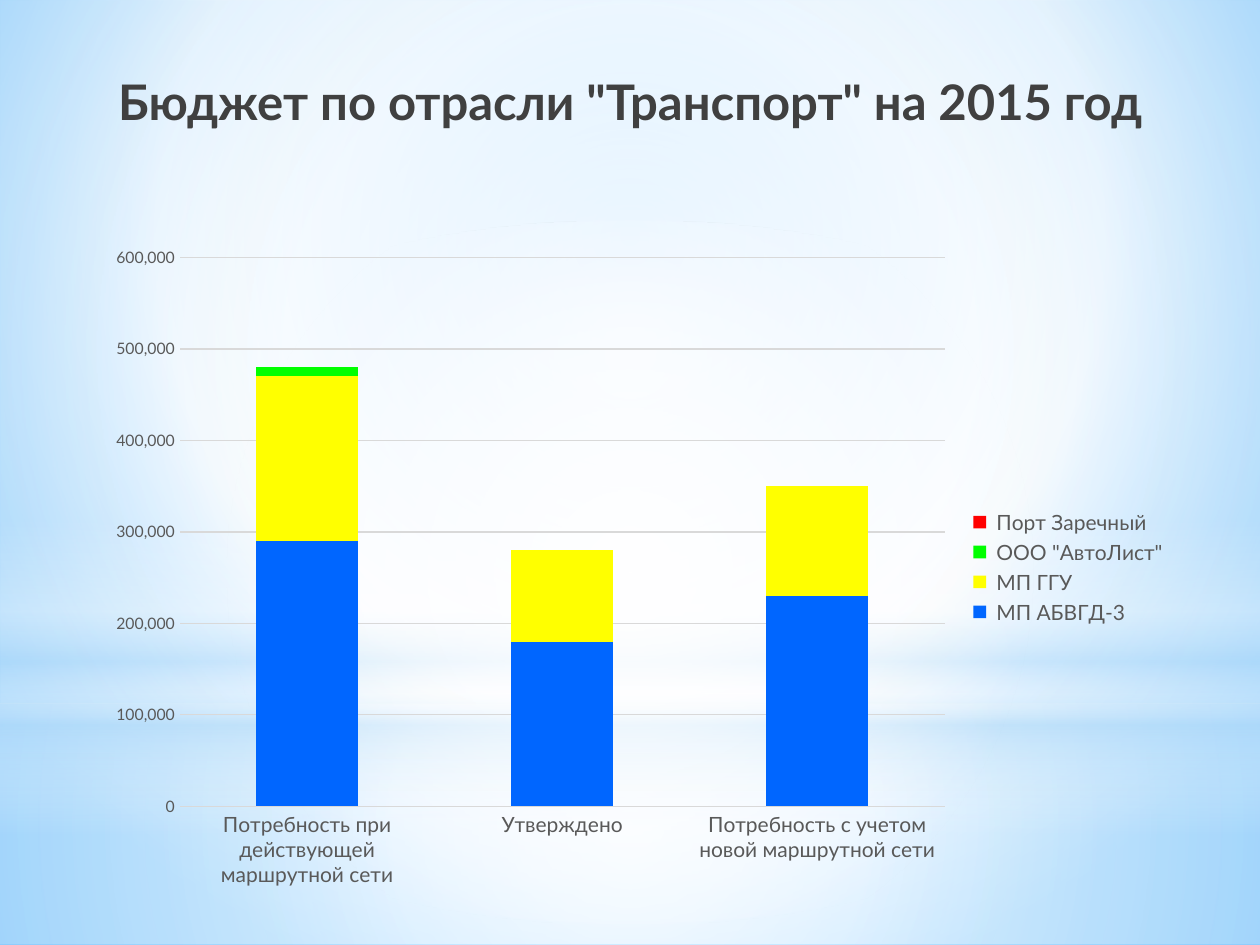
import pptx
import pptx.chart.data
import pptx.dml.color
import pptx.enum.chart
import pptx.enum.shapes
import pptx.enum.text
import pptx.util
from lxml import etree
from pptx.oxml.ns import qn

Pt = pptx.util.Pt
FONT = "Lato"
COLORS = {
    "title": "404040", "label": "595959", "grid": "D9D9D9",
    "white": "FFFFFF", "haze": "B4DCFA", "sky": "9ED5FF", "deep_sky": "5BB9FF",
    "blue": "0066FF", "yellow": "FFFF00", "green": "00FF00", "red": "FF0000",
}
CATEGORIES = [
    "Потребность при действующей маршрутной сети",
    "Утверждено",
    "Потребность с учетом новой маршрутной сети",
]
SERIES = [
    (" МП АБВГД-3 ", (290000, 180000, 230000), "blue"),
    (" МП ГГУ ", (180000, 100000, 120000), "yellow"),
    (' ООО "АвтоЛист" ', (10000, 0, 0), "green"),
    (" Порт Заречный ", (0, 0, 0), "red"),
]
CENTER = (50, 50, 50, 50)
RECTANGLE = pptx.enum.shapes.MSO_SHAPE.RECTANGLE
OVAL = pptx.enum.shapes.MSO_SHAPE.OVAL
# Preset, (left, top, width, height), stops of (position, color, opacity), focus
GLOWS = [
    (RECTANGLE, (0, 402, 720, 138),
     [(0, "white", 91), (37, "white", 76), (100, "haze", 79)], CENTER),
    (RECTANGLE, (0, 0, 720, 402),
     [(0, "white", 89), (48, "white", 62), (100, "haze", 79)], CENTER),
    (RECTANGLE, (0, 297, 720, 180),
     [(0, "white", 0), (29, "white", 30), (45, "haze", 40),
      (55, "white", 26), (65, "haze", 60), (100, "white", 0)], None),
    (OVAL, (0, 126, 720, 402), [(0, "white", 100), (56, "white", 0)], CENTER),
]


def rgb(name):
    return pptx.dml.color.RGBColor.from_string(COLORS[name])


def set_gradient(fill, owner, stops, focus):
    """Fill with stops: circular around focus (l, t, r, b), or downward if None."""
    fill.gradient()
    gradient = next(owner.iter(qn("a:gradFill")))
    for child in list(gradient):
        gradient.remove(child)
    stop_list = etree.SubElement(gradient, qn("a:gsLst"))
    for position, color, opacity in stops:
        stop = etree.SubElement(stop_list, qn("a:gs"), pos=str(position * 1000))
        tint = etree.SubElement(stop, qn("a:srgbClr"), val=COLORS[color])
        if opacity < 100:
            etree.SubElement(tint, qn("a:alpha"), val=str(opacity * 1000))
    if focus is None:
        etree.SubElement(gradient, qn("a:lin"), ang="5400000", scaled="0")
    else:
        circle = etree.SubElement(gradient, qn("a:path"), path="circle")
        sides = {side: str(value * 1000) for side, value in zip("ltrb", focus)}
        etree.SubElement(circle, qn("a:fillToRect"), **sides)


def add_glow(page, preset, place, stops, focus):
    shape = page.shapes.add_shape(preset, *map(Pt, place))
    shape.shadow.inherit = False
    shape.line.fill.background()
    set_gradient(shape.fill, shape._element.spPr, stops, focus)


def style_font(font, size, color, bold=False):
    font.name = FONT
    font.size = Pt(size)
    font.bold = bold
    font.color.rgb = rgb(color)


def add_text(page, text, place, size, color, bold=False):
    box = page.shapes.add_textbox(*map(Pt, place))
    frame = box.text_frame
    frame.word_wrap = True
    frame.vertical_anchor = pptx.enum.text.MSO_ANCHOR.TOP
    para = frame.paragraphs[0]
    para.alignment = pptx.enum.text.PP_ALIGN.CENTER
    span = para.add_run()
    span.text = text
    style_font(span.font, size, color, bold)


def style_axis(axis, size):
    axis.major_tick_mark = pptx.enum.chart.XL_TICK_MARK.NONE
    axis.minor_tick_mark = pptx.enum.chart.XL_TICK_MARK.NONE
    axis.format.line.fill.background()
    style_font(axis.tick_labels.font, size, "label")


def add_budget_chart(page, place):
    data = pptx.chart.data.CategoryChartData(number_format="#,##0")
    data.categories = CATEGORIES
    for name, values, _ in SERIES:
        data.add_series(name, values)
    kind = pptx.enum.chart.XL_CHART_TYPE.COLUMN_STACKED
    chart = page.shapes.add_chart(kind, *map(Pt, place), data).chart
    chart.has_title = False
    style_font(chart.font, 10, "label")

    plot = chart.plots[0]
    plot.gap_width = 150
    plot.overlap = 100
    plot.vary_by_categories = False
    for series, (_, _, color) in zip(plot.series, SERIES):
        series.format.fill.solid()
        series.format.fill.fore_color.rgb = rgb(color)

    style_axis(chart.category_axis, 12)
    values_axis = chart.value_axis
    style_axis(values_axis, 9)
    values_axis.minimum_scale = 0
    values_axis.maximum_scale = 600000
    values_axis.major_unit = 100000
    values_axis.tick_labels.number_format = "#,##0"
    values_axis.tick_labels.number_format_is_linked = False
    grid = values_axis.major_gridlines.format.line
    grid.color.rgb = rgb("grid")
    grid.width = Pt(0.75)

    chart.has_legend = True
    chart.legend.position = pptx.enum.chart.XL_LEGEND_POSITION.RIGHT
    chart.legend.include_in_layout = False
    style_font(chart.legend.font, 12, "label")


def main():
    deck = pptx.Presentation()
    deck.slide_width, deck.slide_height = Pt(720), Pt(540)
    page = deck.slides.add_slide(deck.slide_layouts[6])
    sky = [(0, "sky", 100), (60, "white", 100), (100, "deep_sky", 100)]
    set_gradient(page.background.fill, page._element, sky, (20, 10, 20, 60))
    for glow in GLOWS:
        add_glow(page, *glow)
    add_text(page, 'Бюджет по отрасли "Транспорт" на 2015 год',
             (36.5, 37.5, 647, 62.5), size=28, color="title", bold=True)
    add_budget_chart(page, (54, 134, 623.5, 380))
    deck.save("out.pptx")


if __name__ == "__main__":
    main()
